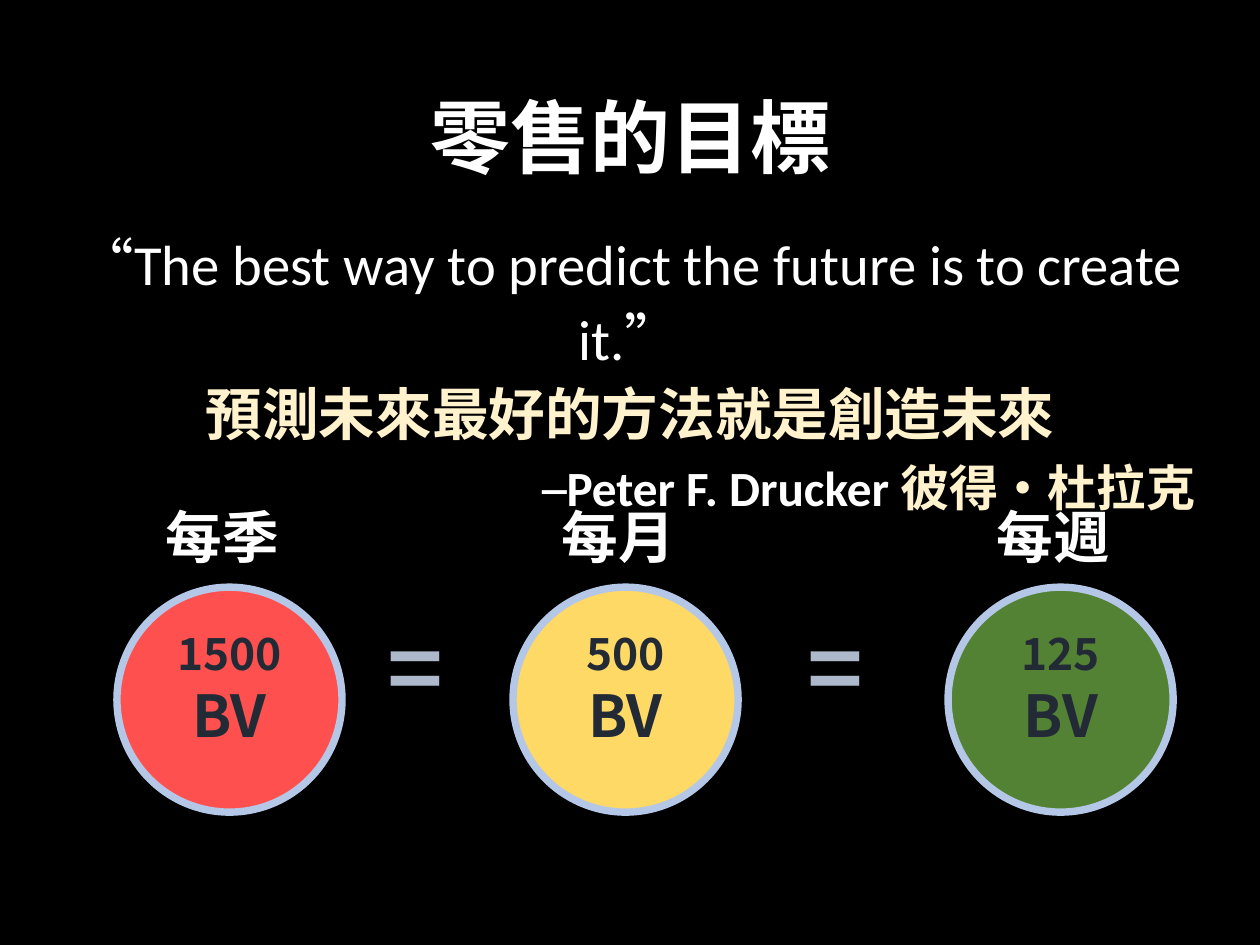
from pptx import Presentation
from pptx import util as u
from pptx.dml.color import RGBColor
from pptx.enum import shapes, text

WHITE, CREAM = "FFFFFF", "FFF2CC"
SANS = "Noto Sans CJK SC"
ALIGN = text.PP_ALIGN


def paint(color, code):
    color.rgb = RGBColor.from_string(code)


def write(para, words, size=46, font="Calibri", color=WHITE, bold=True):
    run = para.add_run()
    run.text = words
    run.font.size = u.Pt(size)
    run.font.name = font
    run.font.bold = bold
    paint(run.font.color, color)


def frame(slide, box, pad=(0.1, 0.05), anchor=text.MSO_ANCHOR.TOP):
    area = slide.shapes.add_textbox(*map(u.Inches, box)).text_frame
    area.word_wrap = True
    area.vertical_anchor = anchor
    area.margin_left = area.margin_right = u.Inches(pad[0])
    area.margin_top = area.margin_bottom = u.Inches(pad[1])
    return area


def style(para, align, line=None, before=None):
    para.alignment = align
    if line:
        para.line_spacing = line
    if before:
        para.space_before = u.Pt(before)
    return para


def title(slide, box):
    area = frame(slide, box, (0.14, 0.07), text.MSO_ANCHOR.MIDDLE)
    write(style(area.paragraphs[0], ALIGN.CENTER, 0.9), "零售的目標", size=65)


def quote(slide, box):
    area = frame(slide, box, (0.14, 0.07))
    para = style(area.paragraphs[0], ALIGN.CENTER, 1.1, 14.2)
    write(para, "“The best way to predict the future is to create it.”", bold=False)
    para.add_line_break()
    write(para, "預測未來最好的方法就是創造未來", color=CREAM)
    para = style(area.add_paragraph(), ALIGN.RIGHT, 0.9, 14.2)
    write(para, "─Peter F. Drucker ", size=40)
    write(para, "彼得‧杜拉克", size=40, color=CREAM)


def goal(slide, box, period, value, fill):
    left, top, wide, high = box
    disc = slide.shapes.add_shape(shapes.MSO_SHAPE.OVAL, *map(u.Inches, box))
    disc.shadow.inherit = False
    disc.fill.solid()
    paint(disc.fill.fore_color, fill)
    paint(disc.line.color, "B4C7E7")
    disc.line.width = u.Pt(6)

    area = frame(slide, (left + 0.14, top + 0.39, wide - 0.28, 1.53))
    para = style(area.paragraphs[0], ALIGN.CENTER)
    write(para, value, size=36, font=SANS, color="222A35")
    para.add_line_break()
    write(para, "BV", size=47, font=SANS, color="222A35")

    area = frame(slide, (left + 0.45, top - 1.01, 1.65, 0.91))
    write(style(area.paragraphs[0], ALIGN.JUSTIFY), period)


def equal(slide, box):
    area = frame(slide, box)
    write(area.paragraphs[0], "=", size=77, font="Noto Sans CJK KR", color="ADB9CA")


def main():
    deck = Presentation()
    deck.slide_width, deck.slide_height = u.Inches(14.22), u.Inches(10.67)
    slide = deck.slides.add_slide(deck.slide_layouts[6])
    slide.background.fill.solid()
    paint(slide.background.fill.fore_color, "000000")

    title(slide, (0.98, 0.57, 12.27, 2.06))
    quote(slide, (0.59, 2.44, 13.04, 1.74))
    for left in (4.27, 9.02):
        equal(slide, (left, 6.84, 1.04, 1.44))
    goals = (
        (1.32, "每季", "1500", "FF5050"),
        (5.79, "每月", "500", "FFD966"),
        (10.7, "每週", "125", "548235"),
    )
    for left, period, value, fill in goals:
        goal(slide, (left, 6.63, 2.54, 2.54), period, value, fill)
    deck.save("out.pptx")


if __name__ == "__main__":
    main()
